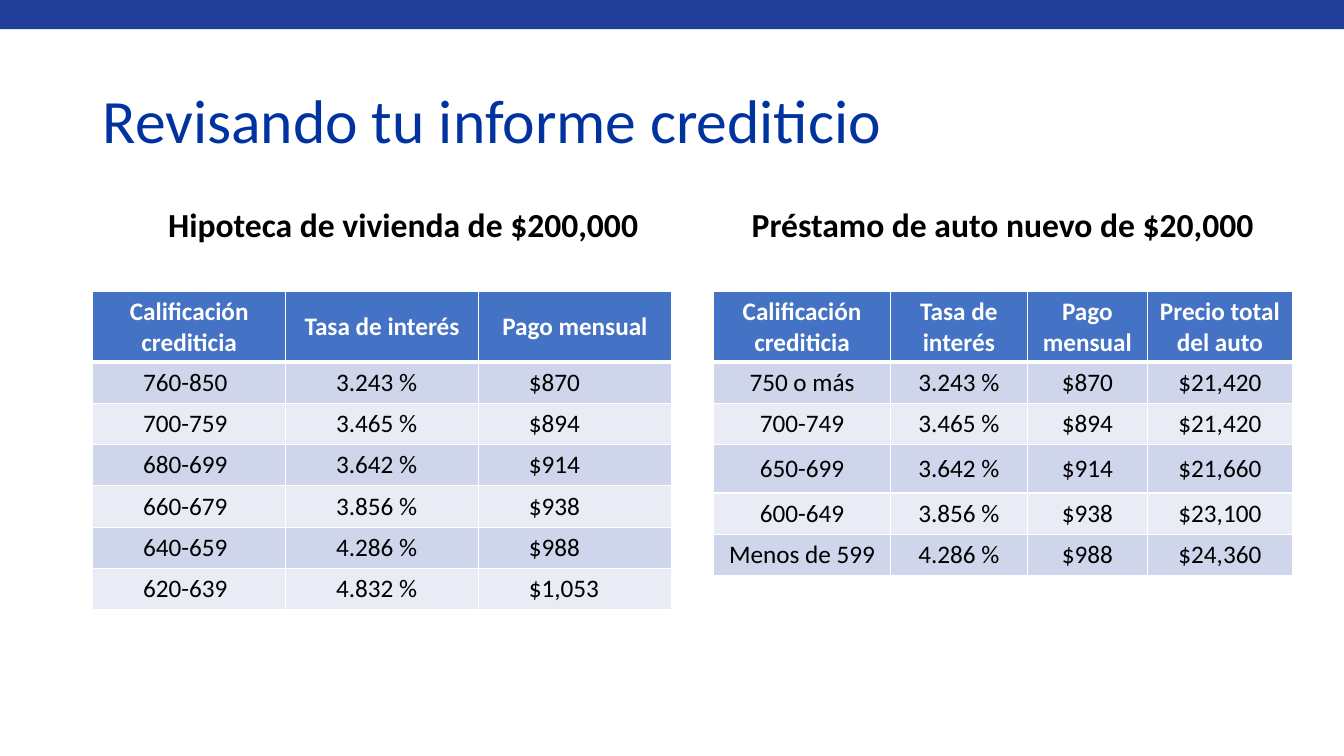
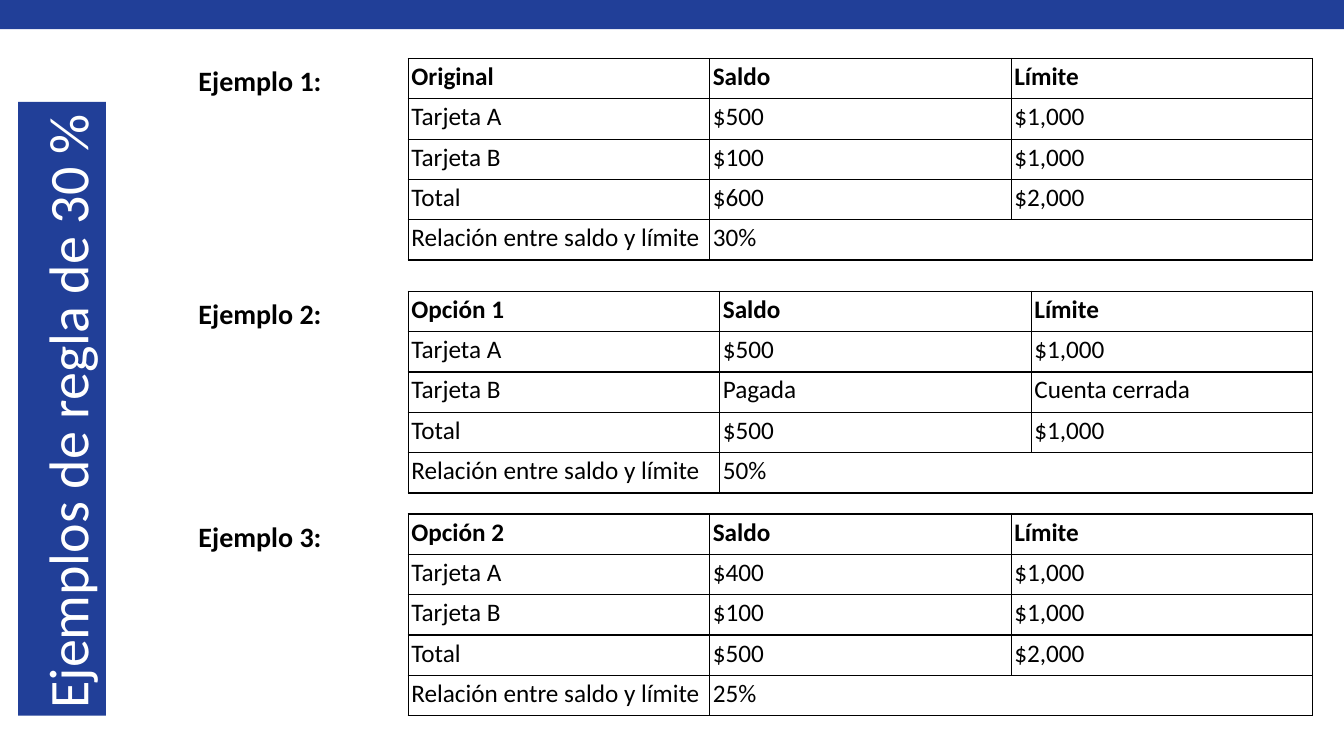
"""Build two slides on credit scores and the 30 % balance rule."""
from lxml import etree
from pptx import Presentation
from pptx.dml.color import RGBColor
from pptx.enum.shapes import MSO_SHAPE
from pptx.enum.text import MSO_ANCHOR, PP_ALIGN
from pptx.oxml.ns import qn
from pptx.util import Inches, Pt

RECTANGLE = MSO_SHAPE.RECTANGLE
TOP, MIDDLE = MSO_ANCHOR.TOP, MSO_ANCHOR.MIDDLE
LEFT, CENTER = PP_ALIGN.LEFT, PP_ALIGN.CENTER

NAVY = RGBColor(0x21, 0x3F, 0x98)
TITLE_BLUE = RGBColor(0x00, 0x33, 0xA0)
HEADER_BLUE = RGBColor(0x44, 0x72, 0xC4)
DARK_BAND = RGBColor(0xCF, 0xD5, 0xEA)
LIGHT_BAND = RGBColor(0xE9, 0xEB, 0xF5)
WHITE = RGBColor(0xFF, 0xFF, 0xFF)
BLACK = RGBColor(0x00, 0x00, 0x00)

FONT = "Calibri"
SLIDE_WIDTH, SLIDE_HEIGHT = 13.33, 7.5
RATE_LEFTS, RATE_TOP, RATE_WIDTH = (0.92, 7.08), 2.89, 5.74
HEADER_ROW, RATE_ROW, TALL_ROW = 0.7, 0.41, 0.48
EXAMPLE_TOPS = (0.58, 2.89, 5.1)
EXAMPLE_LEFT, EXAMPLE_WIDTH, EXAMPLE_ROW = 4.05, 8.97, 0.4
TIGHT = Inches(0.03)

MORTGAGE = [
    ("Calificación crediticia", "Tasa de interés", "Pago mensual"),
    ("760-850", "3.243 %", "$870"),
    ("700-759", "3.465 %", "$894"),
    ("680-699", "3.642 %", "$914"),
    ("660-679", "3.856 %", "$938"),
    ("640-659", "4.286 %", "$988"),
    ("620-639", "4.832 %", "$1,053"),
]
CAR_LOAN = [
    ("Calificación crediticia", "Tasa de interés", "Pago mensual", "Precio total del auto"),
    ("750 o más", "3.243 %", "$870", "$21,420"),
    ("700-749", "3.465 %", "$894", "$21,420"),
    ("650-699", "3.642 %", "$914", "$21,660"),
    ("600-649", "3.856 %", "$938", "$23,100"),
    ("Menos de 599", "4.286 %", "$988", "$24,360"),
]
EXAMPLES = [
    ("Original", ("$500", "$1,000"), ("$100", "$1,000"), ("$600", "$2,000"), "30%"),
    ("Opción 1", ("$500", "$1,000"), ("Pagada", "Cuenta cerrada"), ("$500", "$1,000"), "50%"),
    ("Opción 2", ("$400", "$1,000"), ("$100", "$1,000"), ("$500", "$2,000"), "25%"),
]
EXAMPLE_SHARES = [(1, 1, 1), (3.09, 3.09, 2.79), (1, 1, 1)]


def style_para(para, size, color, bold=False, align=LEFT):
    """Set the font and alignment of a paragraph."""
    para.alignment = align
    para.font.name, para.font.size = FONT, Pt(size)
    para.font.bold, para.font.color.rgb = bold, color


def add_bar(page, left, top, width, height):
    """Add a plain navy rectangle."""
    bar = page.shapes.add_shape(RECTANGLE, Inches(left), Inches(top), Inches(width), Inches(height))
    bar.shadow.inherit = False
    bar.fill.solid()
    bar.fill.fore_color.rgb = NAVY
    bar.line.fill.background()


def add_text(page, text, area, size, color, bold=False, align=LEFT, anchor=TOP):
    """Add a wrapped one-paragraph text box and return it."""
    box = page.shapes.add_textbox(*map(Inches, area))
    frame = box.text_frame
    frame.word_wrap, frame.vertical_anchor = True, anchor
    para = frame.paragraphs[0]
    para.text = text
    style_para(para, size, color, bold, align)
    return box


def add_page(deck):
    """Add a blank slide with the shared top band."""
    page = deck.slides.add_slide(deck.slide_layouts[6])
    add_bar(page, 0, 0, SLIDE_WIDTH, 0.29)
    return page


def set_borders(cell, color, **widths):
    """Draw the four cell borders, one point wide unless a side says otherwise."""
    properties = cell._tc.get_or_add_tcPr()
    for side in "LRTB":
        line = etree.SubElement(properties, qn(f"a:ln{side}"), w=str(Pt(widths.get(side, 1))))
        fill = etree.SubElement(line, qn("a:solidFill"))
        etree.SubElement(fill, qn("a:srgbClr"), val=str(color))


def add_grid(page, left, top, width, shares, heights, rows):
    """Add an unstyled table with its text and return it."""
    frame = page.shapes.add_table(len(rows), len(shares), Inches(left), Inches(top),
                                  Inches(width), Inches(sum(heights)))
    table = frame.table
    table.first_row = table.horz_banding = False
    for column, share in zip(table.columns, shares):
        column.width = Inches(width * share / sum(shares))
    for row, height, texts in zip(table.rows, heights, rows):
        row.height = Inches(height)
        for cell, text in zip(row.cells, texts):
            cell.text = text
    return table


def add_rate_table(page, left, shares, heights, rows, indent=None):
    """Add a banded table of rates, centred or indented."""
    table = add_grid(page, left, RATE_TOP, RATE_WIDTH, shares, heights, rows)
    for index, row in enumerate(table.rows):
        header = index == 0
        fill = HEADER_BLUE if header else (LIGHT_BAND, DARK_BAND)[index % 2]
        for cell in row.cells:
            set_borders(cell, WHITE, T=3 if index == 1 else 1, B=3 if header else 1)
            cell.fill.solid()
            cell.fill.fore_color.rgb = fill
            cell.vertical_anchor = MIDDLE
            para = cell.text_frame.paragraphs[0]
            indented = indent and not header
            style_para(para, 18, WHITE if header else BLACK, header, LEFT if indented else CENTER)
            if indented:
                para._p.get_or_add_pPr().set("marL", str(Inches(indent)))


def add_example(page, number, top, shares, example):
    """Add a labelled table of card balances and limits."""
    name, card_a, card_b, total, ratio = example
    rows = [(name, "Saldo", "Límite"), ("Tarjeta A", *card_a), ("Tarjeta B", *card_b),
            ("Total", *total), ("Relación entre saldo y límite", ratio, "")]
    table = add_grid(page, EXAMPLE_LEFT, top, EXAMPLE_WIDTH, shares,
                     [EXAMPLE_ROW] * len(rows), rows)
    for index, row in enumerate(table.rows):
        for cell in row.cells:
            set_borders(cell, BLACK)
            cell.fill.background()
            cell.margin_left = cell.margin_right = cell.margin_top = cell.margin_bottom = TIGHT
            style_para(cell.text_frame.paragraphs[0], 18, BLACK, index == 0)
    table.cell(4, 1).merge(table.cell(4, 2))
    add_text(page, f"Ejemplo {number}:", (1.87, top, 2, 0.44), 20, BLACK, True)


def build_report_page(deck):
    """Compare mortgage and car loan rates by credit score."""
    page = add_page(deck)
    title = add_text(page, "Revisando tu informe crediticio", (0.92, 0.75, 11.5, 0.95),
                     44, TITLE_BLUE, anchor=MIDDLE)
    mortgage = add_text(page, "Hipoteca de vivienda de $200,000",
                        (RATE_LEFTS[0], 2.02, 6.16, 0.5), 24, BLACK, True, CENTER)
    car = add_text(page, "Préstamo de auto nuevo de $20,000",
                   (RATE_LEFTS[1], 2.02, 5.73, 0.5), 24, BLACK, True, CENTER)
    for box in (title, mortgage, car):
        box.text_frame.paragraphs[0].line_spacing = 0.9
    add_rate_table(page, RATE_LEFTS[0], (1, 1, 1), [HEADER_ROW] + [RATE_ROW] * 6, MORTGAGE, 0.4)
    add_rate_table(page, RATE_LEFTS[1], (1.75, 1.36, 1.19, 1.44),
                   [HEADER_ROW, RATE_ROW, RATE_ROW, TALL_ROW, RATE_ROW, RATE_ROW], CAR_LOAN)


def build_examples_page(deck):
    """Show three examples of the 30 % rule."""
    page = add_page(deck)
    add_bar(page, 0.18, 1.01, 0.87, 6.09)
    heading = add_text(page, "Ejemplos de regla de 30 %", (-2.37, 3.6, 6.05, 0.87),
                       40, WHITE, anchor=MIDDLE)
    heading.rotation = 270
    frame = heading.text_frame
    frame.margin_left = frame.margin_right = frame.margin_top = frame.margin_bottom = TIGHT
    for number, parts in enumerate(zip(EXAMPLE_TOPS, EXAMPLE_SHARES, EXAMPLES), 1):
        add_example(page, number, *parts)


def main():
    """Build and save the deck."""
    deck = Presentation()
    deck.slide_width, deck.slide_height = Inches(SLIDE_WIDTH), Inches(SLIDE_HEIGHT)
    build_report_page(deck)
    build_examples_page(deck)
    deck.save("out.pptx")


if __name__ == "__main__":
    main()
